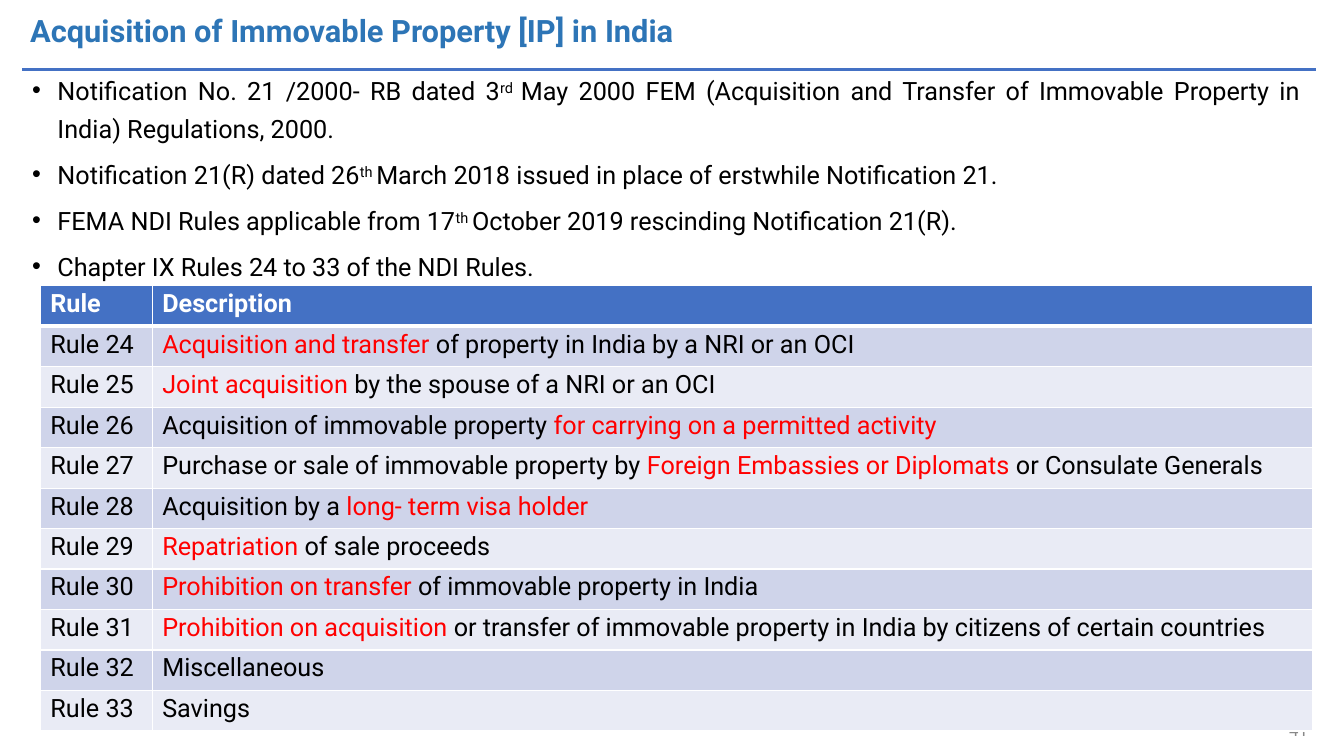
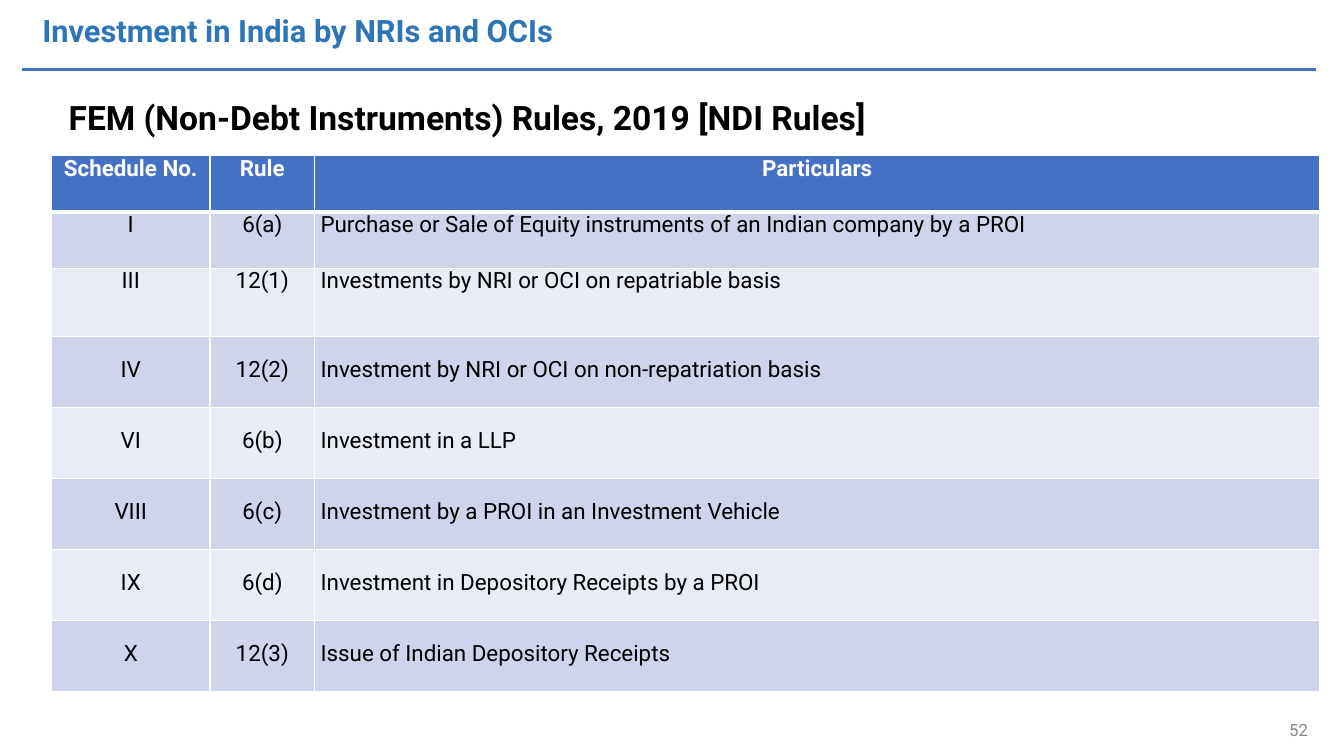
from lxml.etree import SubElement
from pptx import Presentation
from pptx.dml.color import RGBColor
from pptx.enum.shapes import MSO_CONNECTOR
from pptx.enum.text import PP_ALIGN
from pptx.oxml.ns import qn
from pptx.util import Cm, Pt

FONT = "Roboto"
TITLE_BLUE, BAND_BLUE = "2D75B6", "4471C4"
STRIPES = ("CFD4EA", "E9EBF5")
BLACK, WHITE, RED, GREY = "000000", "FFFFFF", "FF0000", "888888"
SLIDE_W, SLIDE_H = 33.87, 19.05


def rgb(hex_code):
    return RGBColor.from_string(hex_code)


def add_run(paragraph, text, size, color=BLACK, bold=False):
    run = paragraph.add_run()
    run.text = text
    run.font.name = FONT
    run.font.size = Pt(size)
    run.font.bold = bold
    run.font.color.rgb = rgb(color)
    return run


def marked_parts(text):
    """Yield each part of the text and whether it stands between bars."""
    for position, part in enumerate(text.split("|")):
        if part:
            yield part, position % 2 == 1


def add_text_frame(slide, left, top, width, height):
    frame = slide.shapes.add_textbox(Cm(left), Cm(top), Cm(width), Cm(height)).text_frame
    frame.word_wrap = True
    frame.margin_left = frame.margin_top = frame.margin_right = frame.margin_bottom = 0
    return frame


def add_heading(slide, text, left, top, size, color):
    frame = add_text_frame(slide, left, top, SLIDE_W - left - 1, size * 0.05)
    add_run(frame.paragraphs[0], text, size, color, bold=True)


def add_titled_slide(deck, title, title_left, number):
    slide = deck.slides.add_slide(deck.slide_layouts[6])
    rule = slide.shapes.add_connector(
        MSO_CONNECTOR.STRAIGHT, Cm(0.56), Cm(1.74), Cm(33.17), Cm(1.74))
    rule.line.color.rgb = rgb(BAND_BLUE)
    rule.line.width = Pt(2.16)
    SubElement(rule._element.spPr, qn("a:effectLst"))
    add_heading(slide, title, title_left, 0.3, 22, TITLE_BLUE)
    footer = add_text_frame(slide, 32.49, 18.21, 0.8, 0.44).paragraphs[0]
    footer.line_spacing = Pt(12.4)
    add_run(footer, number, 12, GREY)
    return slide


def add_bullets(slide, left, top, width, height, items):
    """Write bullets; bars mark superscripts and a newline breaks a line."""
    frame = add_text_frame(slide, left, top, width, height)
    for index, item in enumerate(items):
        paragraph = frame.paragraphs[0] if index == 0 else frame.add_paragraph()
        properties = paragraph._p.get_or_add_pPr()
        properties.set("marL", str(Cm(0.74)))
        properties.set("indent", str(Cm(-0.64)))
        SubElement(properties, qn("a:buFont"), typeface="Arial")
        SubElement(properties, qn("a:buChar"), char="•")
        paragraph.alignment = PP_ALIGN.JUSTIFY
        paragraph.line_spacing = Pt(27)
        if index:
            paragraph.space_before = Pt(5.9)
        for line_index, line in enumerate(item.split("\n")):
            if line_index:
                paragraph.add_line_break()
            for part, raised in marked_parts(line):
                run = add_run(paragraph, part, 18)
                if raised:
                    run.font._element.set("baseline", "25000")


def set_borders(cell, row):
    """Draw white borders, heavier between the header and the body."""
    properties = cell._tc.get_or_add_tcPr()
    heavy_side = {0: "lnB", 1: "lnT"}.get(row)
    for position, side in enumerate(("lnL", "lnR", "lnT", "lnB")):
        width = Pt(3 if side == heavy_side else 1)
        line = properties.makeelement(qn(f"a:{side}"), {"w": str(width)})
        fill = SubElement(line, qn("a:solidFill"))
        SubElement(fill, qn("a:srgbClr"), val=WHITE)
        properties.insert(position, line)


def add_rules_table(slide, left, top, columns, heights, rows, size, pads, indent, centred=()):
    """Add a striped table; bars mark red words, pads are top margins by row."""
    table = slide.shapes.add_table(
        len(rows), len(columns), Cm(left), Cm(top), Cm(sum(columns)), Cm(sum(heights))).table
    for column, width in zip(table.columns, columns):
        column.width = Cm(width)
    for row, (height, texts, pad) in enumerate(zip(heights, rows, pads)):
        table.rows[row].height = Cm(height)
        header = row == 0
        for column, text in enumerate(texts):
            cell = table.cell(row, column)
            cell.fill.solid()
            cell.fill.fore_color.rgb = rgb(BAND_BLUE if header else STRIPES[(row - 1) % 2])
            set_borders(cell, row)
            middle = column in centred or (header and bool(centred))
            cell.margin_left = 0 if middle else Cm(indent)
            cell.margin_right = cell.margin_bottom = 0
            cell.margin_top = Cm(pad)
            paragraph = cell.text_frame.paragraphs[0]
            paragraph.alignment = PP_ALIGN.CENTER if middle else PP_ALIGN.LEFT
            for part, marked in marked_parts(text):
                color = WHITE if header else RED if marked else BLACK
                add_run(paragraph, part, size, color, bold=header)


def build_property_slide(deck):
    slide = add_titled_slide(deck, "Acquisition of Immovable Property [IP] in India", 0.76, "41")
    add_bullets(slide, 0.71, 1.7, 32.06, 5.4, [
        "Notification No. 21 /2000- RB dated 3|rd |May 2000 FEM (Acquisition and Transfer of "
        "Immovable Property in\nIndia) Regulations, 2000.",
        "Notification 21(R) dated 26|th |March 2018 issued in place of erstwhile Notification 21.",
        "FEMA NDI Rules applicable from 17|th |October 2019 rescinding Notification 21(R).",
        "Chapter IX Rules 24 to 33 of the NDI Rules.",
    ])
    descriptions = [
        "|Acquisition and transfer |of property in India by a NRI or an OCI",
        "|Joint acquisition |by the spouse of a NRI or an OCI",
        "Acquisition of immovable property |for carrying on a permitted activity",
        "Purchase or sale of immovable property by |Foreign Embassies or Diplomats "
        "|or Consulate Generals",
        "Acquisition by a |long- term visa holder",
        "|Repatriation |of sale proceeds",
        "|Prohibition on transfer |of immovable property in India",
        "|Prohibition on acquisition |or transfer of immovable property in India "
        "by citizens of certain countries",
        "Miscellaneous",
        "Savings",
    ]
    rows = [("Rule", "Description")]
    rows += [(f"Rule {rule}", text) for rule, text in enumerate(descriptions, 24)]
    add_rules_table(slide, 1.02, 7.2, (2.82, 29.24), [1.02] * len(rows), rows,
                    size=18, pads=[0.09] * len(rows), indent=0.25)


def build_investment_slide(deck):
    slide = add_titled_slide(deck, "Investment in India by NRIs and OCIs", 1.07, "52")
    rows = [
        ("Schedule No.", "Rule", "Particulars"),
        ("I", "6(a)", "Purchase or Sale of Equity instruments of an Indian company by a PROI"),
        ("III", "12(1)", "Investments by NRI or OCI on repatriable basis"),
        ("IV", "12(2)", "Investment by NRI or OCI on non-repatriation basis"),
        ("VI", "6(b)", "Investment in a LLP"),
        ("VIII", "6(c)", "Investment by a PROI in an Investment Vehicle"),
        ("IX", "6(d)", "Investment in Depository Receipts by a PROI"),
        ("X", "12(3)", "Issue of Indian Depository Receipts"),
    ]
    add_rules_table(slide, 1.3, 3.92, (3.99, 2.64, 25.33), [1.42, 1.42, 1.72] + [1.79] * 5, rows,
                    size=16, pads=[0] * 3 + [0.52] * 5, indent=0.15, centred=(0, 1))
    add_heading(slide, "FEM (Non-Debt Instruments) Rules, 2019 [NDI Rules]", 1.73, 2.44, 24, BLACK)


def main():
    deck = Presentation()
    deck.slide_width, deck.slide_height = Cm(SLIDE_W), Cm(SLIDE_H)
    build_property_slide(deck)
    build_investment_slide(deck)
    deck.save("out.pptx")


if __name__ == "__main__":
    main()
